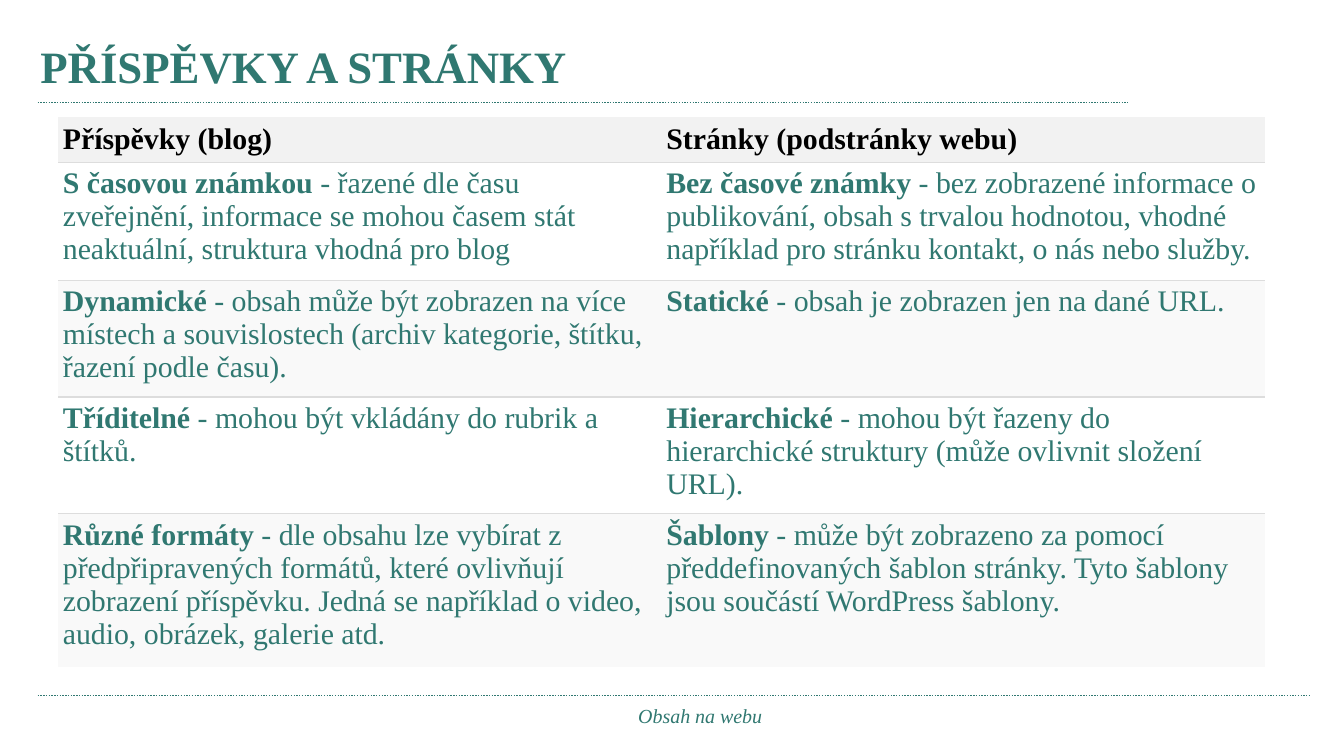
from dataclasses import dataclass

from lxml.etree import SubElement
from pptx import Presentation
from pptx.dml.color import RGBColor
from pptx.enum.dml import MSO_LINE_DASH_STYLE as Dash
from pptx.enum.shapes import MSO_CONNECTOR as Connector
from pptx.enum.text import MSO_ANCHOR as Anchor, MSO_AUTO_SIZE as AutoSize, PP_ALIGN as Align
from pptx.oxml.ns import qn
from pptx.util import Pt


@dataclass(frozen=True)
class Theme:
    font: str = "Times New Roman"
    accent: str = "307871"
    header_text: str = "000000"
    header_fill: str = "F2F2F2"
    row_fills: tuple = ("FFFFFF", "F9F9F9")
    border: str = "DDDDDD"
    title_size: float = 24
    table_size: float = 16
    footer_size: float = 10.7
    line_width: float = 0.75
    cell_margin: float = 2.5


THEME = Theme()
SEPARATOR = " - "  # starts with a no-break space
HEADERS = ("Příspěvky (blog)", "Stránky (podstránky webu)")
# Each cell is a bold term and its explanation
COMPARISON = (
    (
        ("S časovou známkou", "řazené dle času zveřejnění, informace se mohou časem stát "
         "neaktuální, struktura vhodná pro blog"),
        ("Bez časové známky", "bez zobrazené informace o publikování, obsah s trvalou "
         "hodnotou, vhodné například pro stránku kontakt, o nás nebo služby."),
    ),
    (
        ("Dynamické", "obsah může být zobrazen na více místech a souvislostech "
         "(archiv kategorie, štítku, řazení podle času)."),
        ("Statické", "obsah je zobrazen jen na dané URL."),
    ),
    (
        ("Tříditelné", "mohou být vkládány do rubrik a štítků."),
        ("Hierarchické", "mohou být řazeny do hierarchické struktury "
         "(může ovlivnit složení URL)."),
    ),
    (
        ("Různé formáty", "dle obsahu lze vybírat z předpřipravených formátů, které "
         "ovlivňují zobrazení příspěvku. Jedná se například o video, audio, obrázek, "
         "galerie atd."),
        ("Šablony", "může být zobrazeno za pomocí předdefinovaných šablon stránky. "
         "Tyto šablony jsou součástí WordPress šablony."),
    ),
)
ROW_HEIGHTS = (22.8, 63.2, 58.5, 58.5, 82)
COLUMN_WIDTH = 323.3


def set_font(paragraph, size, color, bold=None, italic=None):
    font = paragraph.font
    font.name, font.size = THEME.font, Pt(size)
    font.bold, font.italic = bold, italic
    font.color.rgb = RGBColor.from_string(color)


def set_margins(target, horizontal, vertical):
    target.margin_left = target.margin_right = Pt(horizontal)
    target.margin_top = target.margin_bottom = Pt(vertical)


def place(shape, left, top, width, height):
    shape.left, shape.top = Pt(left), Pt(top)
    shape.width, shape.height = Pt(width), Pt(height)


def add_rule(slide, left, right, y):
    rule = slide.shapes.add_connector(Connector.STRAIGHT, Pt(left), Pt(y), Pt(right), Pt(y))
    rule.line.color.rgb = RGBColor.from_string(THEME.accent)
    rule.line.width = Pt(THEME.line_width)
    rule.line.dash_style = Dash.ROUND_DOT
    SubElement(rule._element.spPr, qn("a:effectLst"))


def add_title(slide, text):
    title = slide.shapes.title
    place(title, 14.4, 15.1, 612, 40.3)
    frame = title.text_frame
    frame.text = text
    frame.auto_size = AutoSize.NONE
    frame.vertical_anchor = Anchor.MIDDLE
    frame.paragraphs[0].alignment = Align.LEFT
    set_font(frame.paragraphs[0], THEME.title_size, THEME.accent, bold=True)


def add_footer(slide, text):
    box = slide.shapes.add_textbox(Pt(178.6), Pt(372.2), Pt(393.1), Pt(21.6))
    frame = box.text_frame
    frame.word_wrap = True
    set_margins(frame, 9.4, 5)
    frame.text = text
    frame.paragraphs[0].alignment = Align.CENTER
    set_font(frame.paragraphs[0], THEME.footer_size, THEME.accent, italic=True)


def set_borders(cell, top, bottom):
    properties = cell._tc.get_or_add_tcPr()
    for side, visible in (("L", False), ("R", False), ("T", top), ("B", bottom)):
        line = SubElement(properties, qn(f"a:ln{side}"), w=str(Pt(THEME.line_width)))
        if visible:
            fill = SubElement(line, qn("a:solidFill"))
            SubElement(fill, qn("a:srgbClr"), val=THEME.border)
        else:
            SubElement(line, qn("a:noFill"))


def style_cell(cell, fill, top, bottom):
    set_borders(cell, top, bottom)
    cell.fill.solid()
    cell.fill.fore_color.rgb = RGBColor.from_string(fill)
    set_margins(cell, THEME.cell_margin, THEME.cell_margin)


def add_comparison(slide):
    row_count, column_count = len(ROW_HEIGHTS), len(HEADERS)
    table = slide.shapes.add_table(
        row_count, column_count, Pt(31.2), Pt(62.7),
        Pt(COLUMN_WIDTH * column_count), Pt(sum(ROW_HEIGHTS)),
    ).table
    table.horz_banding = False
    for column in table.columns:
        column.width = Pt(COLUMN_WIDTH)
    for row, height in zip(table.rows, ROW_HEIGHTS):
        row.height = Pt(height)

    # Header row
    for index, text in enumerate(HEADERS):
        cell = table.cell(0, index)
        style_cell(cell, THEME.header_fill, top=False, bottom=True)
        cell.vertical_anchor = Anchor.MIDDLE
        cell.text = text
        set_font(cell.text_frame.paragraphs[0], THEME.table_size, THEME.header_text, bold=True)

    # Body rows
    for row_index, entries in enumerate(COMPARISON, start=1):
        fill = THEME.row_fills[(row_index - 1) % len(THEME.row_fills)]
        for column_index, (term, explanation) in enumerate(entries):
            cell = table.cell(row_index, column_index)
            style_cell(cell, fill, top=True, bottom=row_index < row_count - 1)
            paragraph = cell.text_frame.paragraphs[0]
            set_font(paragraph, THEME.table_size, THEME.accent)
            for text, bold in ((term, True), (SEPARATOR + explanation, False)):
                run = paragraph.add_run()
                run.text, run.font.bold = text, bold


def main():
    presentation = Presentation()
    presentation.slide_width, presentation.slide_height = Pt(720), Pt(405)
    slide = presentation.slides.add_slide(presentation.slide_layouts[5])

    # Dotted rules below the title and above the footer
    add_rule(slide, 20.2, 604, 55.1)
    add_rule(slide, 20.2, 702, 372.6)

    # Content
    add_title(slide, "PŘÍSPĚVKY A STRÁNKY")
    add_footer(slide, "Obsah na webu")
    add_comparison(slide)
    presentation.save("out.pptx")


if __name__ == "__main__":
    main()
